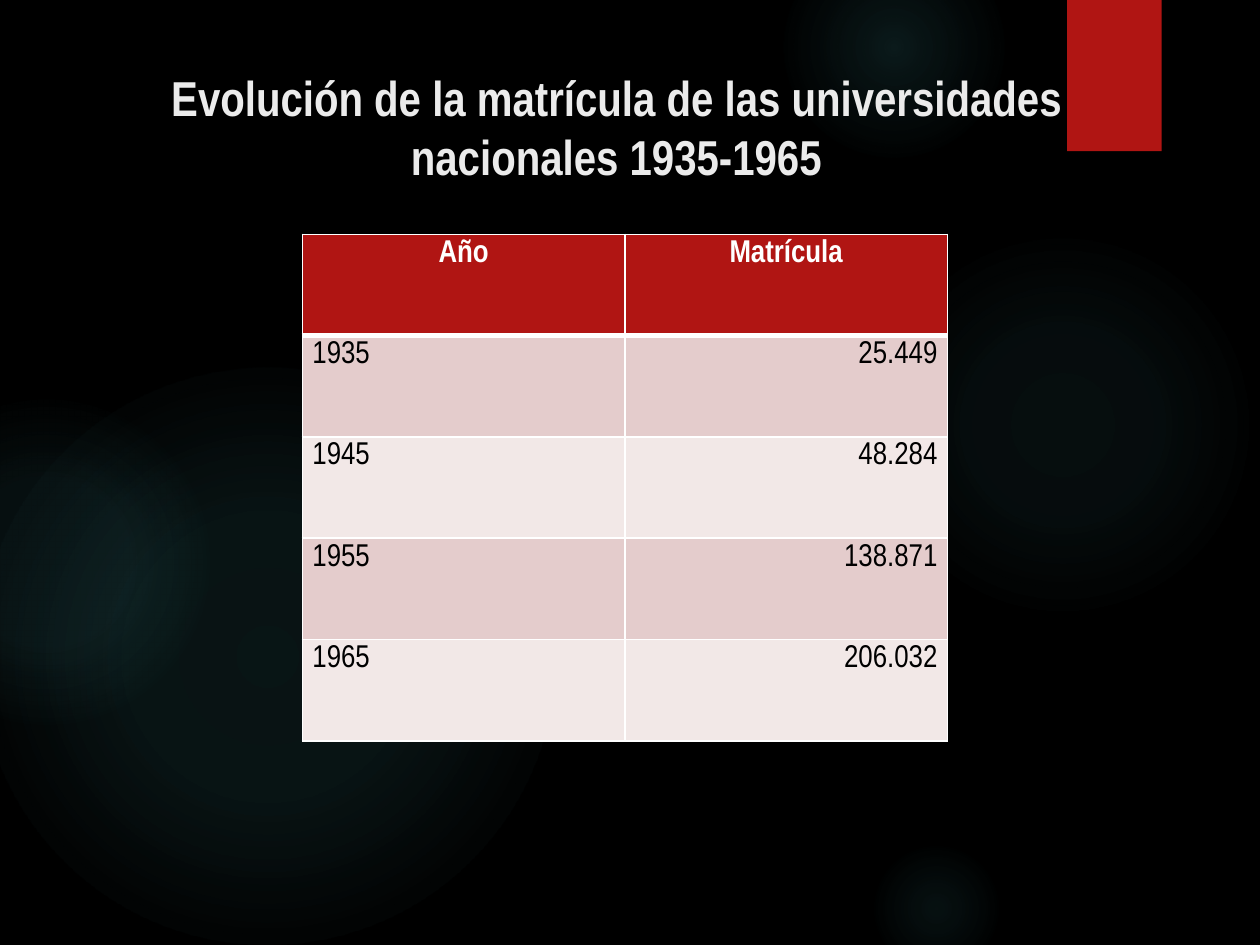
from lxml.etree import SubElement
from pptx import Presentation
from pptx.dml.color import RGBColor
from pptx.enum.shapes import MSO_SHAPE
from pptx.enum.text import MSO_ANCHOR, PP_ALIGN
from pptx.oxml import parse_xml
from pptx.oxml.ns import nsdecls, qn
from pptx.util import Inches, Pt

RED = "B01513"
WHITE = "FFFFFF"
GLOW = "50B9C1"


def color(hex_string):
    return RGBColor.from_string(hex_string)


def write_text(frame, text, size=18, fill="000000", bold=False, align=PP_ALIGN.LEFT):
    paragraph = frame.paragraphs[0]
    paragraph.alignment = align
    run = paragraph.add_run()
    run.text = text
    run.font.name = "Arial Narrow"
    run.font.size = Pt(size)
    run.font.bold = bold
    run.font.color.rgb = color(fill)


presentation = Presentation()
presentation.slide_width = Inches(10)
presentation.slide_height = Inches(7.5)
slide = presentation.slides.add_slide(presentation.slide_layouts[6])
slide.background.fill.solid()
slide.background.fill.fore_color.rgb = color("000000")

# Glowing circles: left, top, diameter, (position %, opacity %) stops
glows = [
    (6.89, 1.83, 3.08, [(0, 7), (36, 6), (69, 0)]),
    (6.22, -0.5, 1.75, [(0, 14), (36, 7), (73, 0)]),
    (6.89, 6.67, 1.08, [(0, 9), (36, 5), (66, 0)]),
    (-0.17, 2.92, 4.58, [(0, 11), (36, 10), (75, 0)]),
    (-0.92, 3.17, 2.58, [(0, 8), (36, 8), (72, 0)]),
]
for left, top, diameter, stops in glows:
    circle = slide.shapes.add_shape(
        MSO_SHAPE.OVAL, Inches(left), Inches(top), Inches(diameter), Inches(diameter))
    circle.shadow.inherit = False
    circle.line.fill.background()
    stop_xml = "".join(
        f'<a:gs pos="{position * 1000}"><a:srgbClr val="{GLOW}">'
        f'<a:alpha val="{opacity * 1000}"/></a:srgbClr></a:gs>'
        for position, opacity in stops)
    gradient = parse_xml(
        f'<a:gradFill {nsdecls("a")}><a:gsLst>{stop_xml}</a:gsLst><a:path path="circle">'
        '<a:fillToRect l="50000" t="50000" r="50000" b="50000"/></a:path></a:gradFill>')
    circle.element.spPr.find(qn("a:prstGeom")).addnext(gradient)

ribbon = slide.shapes.add_shape(
    MSO_SHAPE.RECTANGLE, Inches(8.47), Inches(0), Inches(0.75), Inches(1.2))
ribbon.shadow.inherit = False
ribbon.fill.solid()
ribbon.fill.fore_color.rgb = color(RED)
ribbon.line.fill.background()

title = slide.shapes.add_textbox(Inches(0.53), Inches(0.49), Inches(8.72), Inches(1.13))
title.text_frame.word_wrap = True
title.text_frame.vertical_anchor = MSO_ANCHOR.TOP
write_text(title.text_frame,
           "Evolución de la matrícula de las universidades nacionales 1935-1965",
           size=28, fill="EBEBEB", bold=True, align=PP_ALIGN.CENTER)

rows = [
    ("Año", "Matrícula"),
    ("1935", "25.449"),
    ("1945", "48.284"),
    ("1955", "138.871"),
    ("1965", "206.032"),
]
table = slide.shapes.add_table(
    len(rows), 2, Inches(2.4), Inches(1.86), Inches(5.12), Inches(4.02)).table
for row_index, values in enumerate(rows):
    is_header = row_index == 0
    for column_index, value in enumerate(values):
        cell = table.cell(row_index, column_index)
        cell.margin_left = cell.margin_right = Inches(0.08)
        cell.margin_top = cell.margin_bottom = Inches(0.04)
        if is_header:
            write_text(cell.text_frame, value, fill=WHITE, bold=True, align=PP_ALIGN.CENTER)
            cell_fill = RED
        else:
            write_text(cell.text_frame, value,
                       align=PP_ALIGN.RIGHT if column_index else PP_ALIGN.LEFT)
            cell_fill = "E4CCCC" if row_index % 2 else "F2E8E7"

        properties = cell._tc.get_or_add_tcPr()
        for side in ("L", "R", "T", "B"):
            under_header = (side == "B" and is_header) or (side == "T" and row_index == 1)
            border = SubElement(properties, qn(f"a:ln{side}"), w=str(Pt(3 if under_header else 1)))
            SubElement(SubElement(border, qn("a:solidFill")), qn("a:srgbClr"), val=WHITE)
        cell.fill.solid()
        cell.fill.fore_color.rgb = color(cell_fill)

presentation.save("out.pptx")
